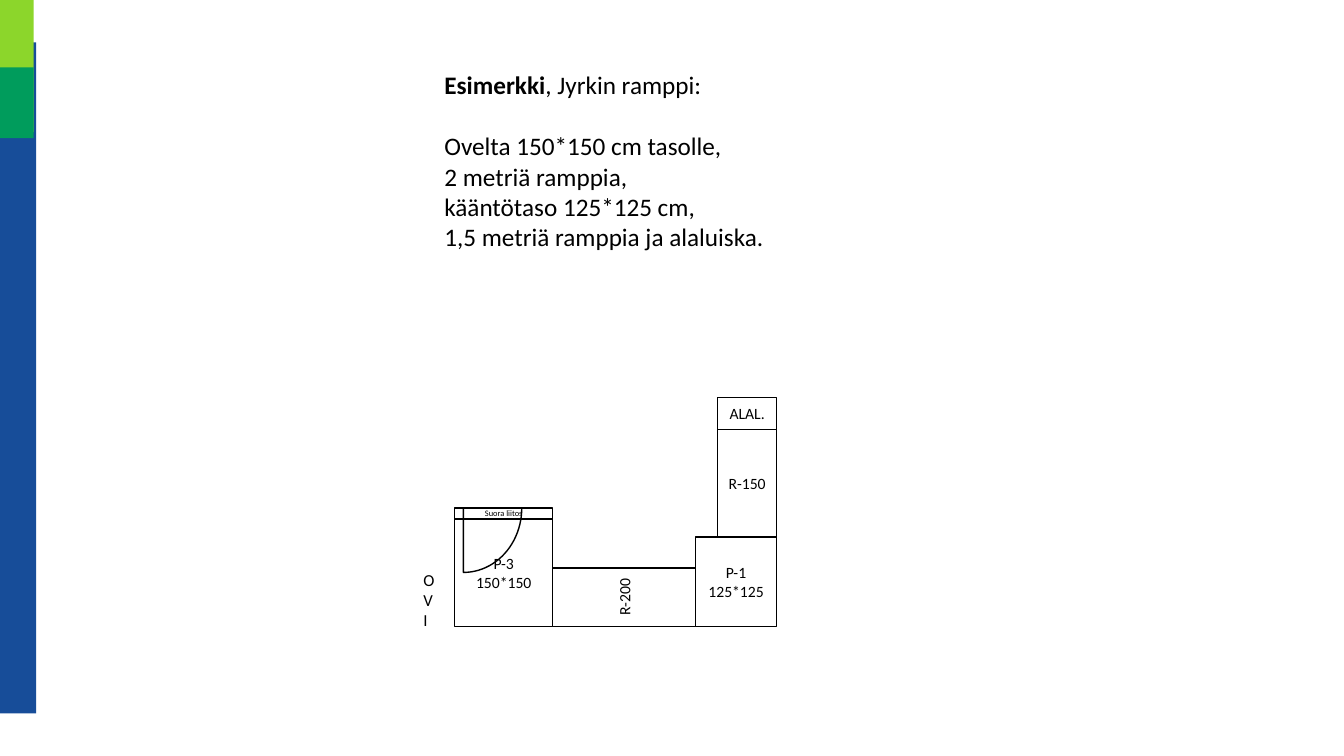
from pptx import Presentation
from pptx.dml.color import RGBColor
from pptx.enum.shapes import MSO_SHAPE
from pptx.enum.text import MSO_ANCHOR, PP_ALIGN
from pptx.util import Cm, Pt

BLACK, WHITE = "000000", "FFFFFF"
RAMP_WIDTH = 1.48
PLAN_BOTTOM = 15.79
PLAN_RIGHT = 19.57


def color(value):
    return RGBColor.from_string(value)


def add_run(p, text, size=11.2, bold=False):
    r = p.add_run()
    r.text = text
    r.font.name = "Calibri"
    r.font.size = Pt(size)
    r.font.bold = bold
    r.font.color.rgb = color(BLACK)


def add_block(s, left, top, width, height, fill=None, line=None,
              kind=MSO_SHAPE.RECTANGLE):
    sp = s.shapes.add_shape(kind, Cm(left), Cm(top), Cm(width), Cm(height))
    sp.shadow.inherit = False
    if fill:
        sp.fill.solid()
        sp.fill.fore_color.rgb = color(fill)
    else:
        sp.fill.background()
    if line:
        sp.line.color.rgb = color(line)
        sp.line.width = Pt(1)
    else:
        sp.line.fill.background()
    return sp


def add_plan_part(s, left, top, width, height, *lines, size=11.2, rotation=0):
    sp = add_block(s, left, top, width, height, WHITE, BLACK)
    sp.rotation = rotation
    tf = sp.text_frame
    tf.margin_left = tf.margin_right = tf.margin_top = tf.margin_bottom = 0
    tf.vertical_anchor = MSO_ANCHOR.MIDDLE
    for i, text in enumerate(lines):
        p = tf.add_paragraph() if i else tf.paragraphs[0]
        p.alignment = PP_ALIGN.CENTER
        add_run(p, text, size)


def add_text_box(s, left, top, width, height):
    tf = s.shapes.add_textbox(Cm(left), Cm(top), Cm(width), Cm(height)).text_frame
    tf.word_wrap = True
    return tf


def add_description(s):
    tf = add_text_box(s, 10.95, 1.63, 8.97, 4.88)
    p = tf.paragraphs[0]
    add_run(p, "Esimerkki", 18, bold=True)
    add_run(p, ", Jyrkin ramppi:", 18)
    lines = ("Ovelta 150*150 cm tasolle,", "2 metriä ramppia,",
             "kääntötaso 125*125 cm,", "1,5 metriä ramppia ja alaluiska.")
    for i, text in enumerate(lines):
        p = tf.add_paragraph()
        if i == 0:
            p.space_before = Pt(22)
        add_run(p, text, 18)


def add_door(s, hinge_x, hinge_y):
    """Quarter-circle door swing with its label stacked letter by letter."""
    width, height = 2.94, 3.25
    door = add_block(s, hinge_x - width / 2, hinge_y - height / 2, width, height,
                     line=BLACK, kind=MSO_SHAPE.PIE)
    door.adjustments[0] = 0
    door.adjustments[1] = 54
    tf = add_text_box(s, 10.67, 14.35, 0.3, 1.55)
    tf.margin_left = tf.margin_right = tf.margin_top = tf.margin_bottom = 0
    add_run(tf.paragraphs[0], "OVI", 12)


def add_ramp_plan(s):
    ramp_left = PLAN_RIGHT - RAMP_WIDTH
    ramp_length = 3.61
    ramp_x, ramp_y = 15.73, PLAN_BOTTOM - RAMP_WIDTH / 2
    add_plan_part(s, ramp_x - RAMP_WIDTH / 2, ramp_y - ramp_length / 2,
                  RAMP_WIDTH, ramp_length, "R-200", rotation=270)
    add_plan_part(s, ramp_left, 10.82, RAMP_WIDTH, 2.71, "R-150")
    add_plan_part(s, 17.53, 13.53, 2.04, 2.26, "P-1", "125*125")
    add_plan_part(s, ramp_left, 10.01, RAMP_WIDTH, 0.81, "ALAL.")
    add_plan_part(s, 11.46, 13.08, 2.47, 2.71, "P-3", "150*150")
    add_plan_part(s, 11.46, 12.8, 2.47, 0.28, "Suora liitos", size=6)
    add_door(s, 11.68, 12.8)


def add_side_bars(s):
    add_block(s, 0, 1.07, 0.91, 16.91, "174D99")
    add_block(s, 0, 0, 0.85, 3.33, "8CD62B")
    add_block(s, 0, 1.7, 0.85, 1.78, "009C5C")


def main():
    prs = Presentation()
    prs.slide_width, prs.slide_height = Cm(33.87), Cm(19.05)
    s = prs.slides.add_slide(prs.slide_layouts[6])
    add_description(s)
    add_ramp_plan(s)
    add_side_bars(s)
    prs.save("out.pptx")


if __name__ == "__main__":
    main()
